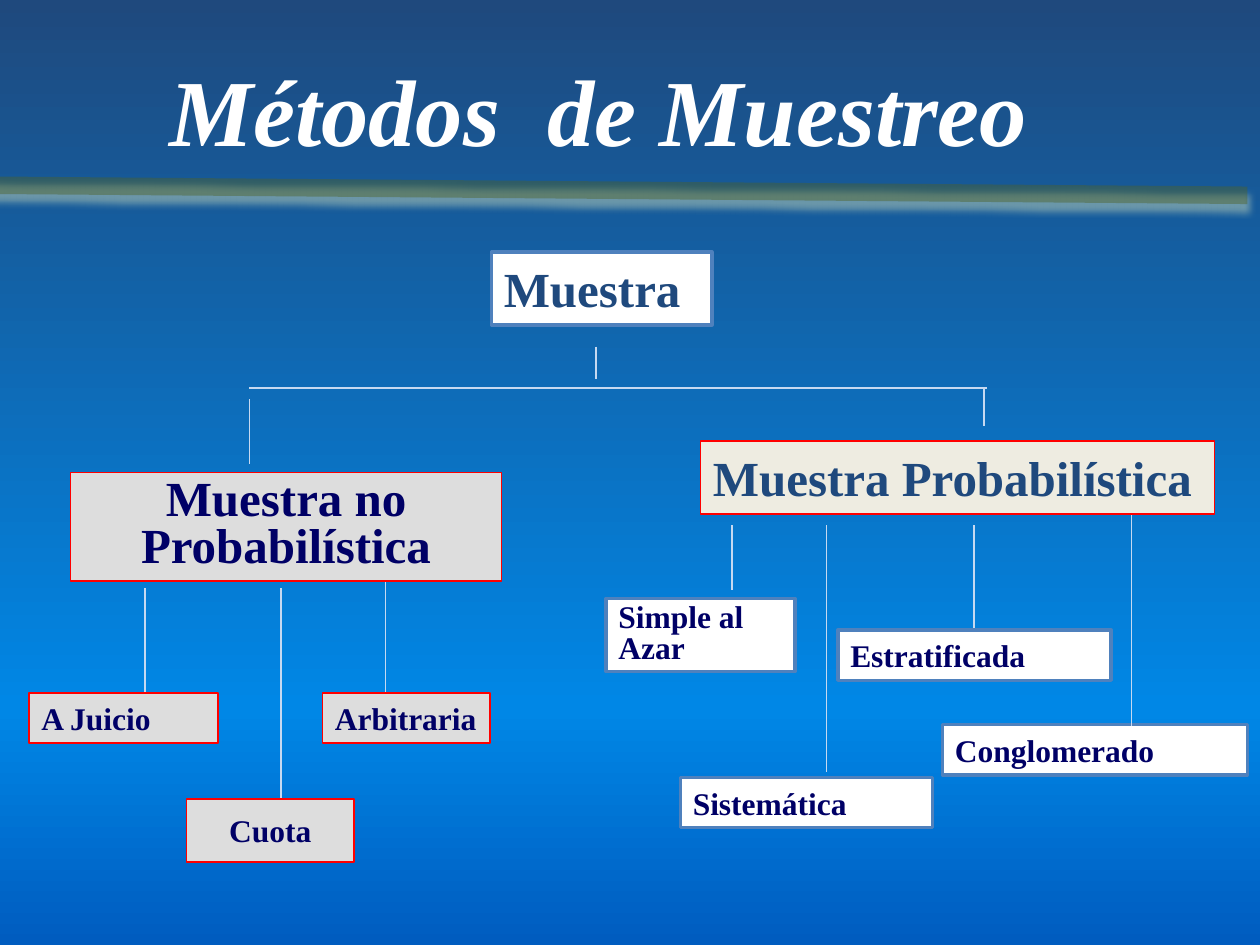
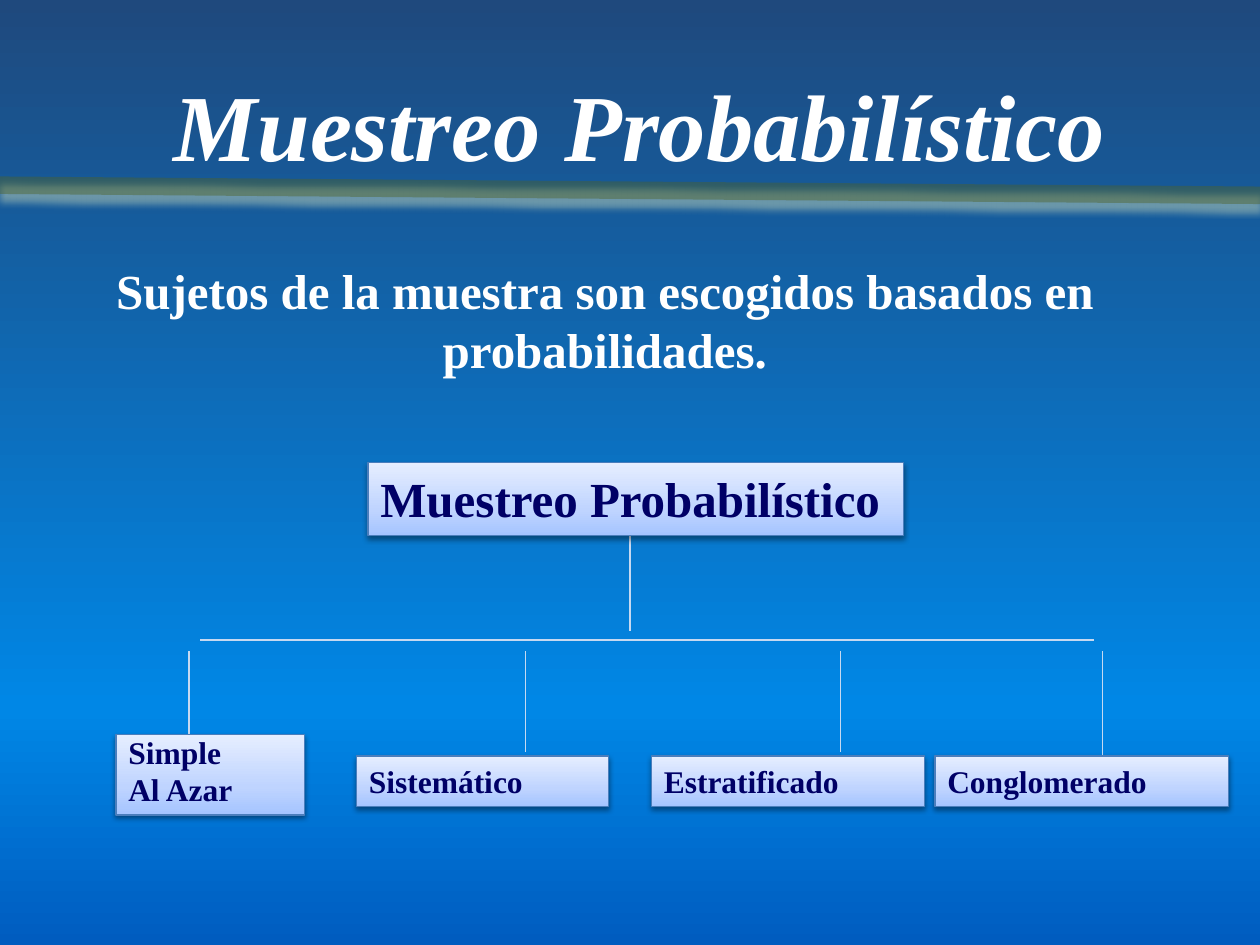
from dataclasses import dataclass

from lxml.etree import SubElement
from pptx import Presentation
from pptx.dml.color import RGBColor
from pptx.enum.shapes import MSO_CONNECTOR as Connector, MSO_SHAPE as Preset
from pptx.enum.text import MSO_ANCHOR as Anchor, MSO_AUTO_SIZE as AutoSize, PP_ALIGN as Align
from pptx.oxml.ns import qn
from pptx.util import Inches, Pt

FONT = "Times New Roman"
WHITE = RGBColor(0xFF, 0xFF, 0xFF)
BLACK = RGBColor(0x00, 0x00, 0x00)
NAVY = RGBColor(0x00, 0x00, 0x66)
DARK_BLUE = RGBColor(0x1F, 0x49, 0x7D)
BRIGHT_BLUE = RGBColor(0x00, 0x87, 0xE6)
DEEP_BLUE = RGBColor(0x00, 0x5C, 0xBF)
PALE_BLUE = RGBColor(0xC6, 0xD9, 0xF1)
BORDER_BLUE = RGBColor(0x4F, 0x81, 0xBD)
SOFT_BORDER = RGBColor(0x4B, 0x7E, 0xBC)
GRAY = RGBColor(0xDD, 0xDD, 0xDD)
CREAM = RGBColor(0xEE, 0xEC, 0xE1)
RED = RGBColor(0xFF, 0x00, 0x00)
OLIVE = RGBColor(0x4F, 0x62, 0x28)
LIGHT_GREEN = RGBColor(0xD7, 0xE4, 0xBD)

BACKGROUND_STOPS = [(0, DARK_BLUE), (75, BRIGHT_BLUE), (100, DEEP_BLUE)]
BOX_STOPS = [(0, RGBColor(0xA4, 0xC4, 0xFF)), (35, RGBColor(0xBF, 0xD4, 0xFF)),
             (100, RGBColor(0xE6, 0xEE, 0xFF))]


@dataclass
class BoxStyle:
    fill: object  # one colour, or a list of gradient stops
    border: RGBColor
    border_width: float
    text_color: RGBColor = NAVY


NON_PROBABILITY = BoxStyle(GRAY, RED, 1)
PROBABILITY = BoxStyle(WHITE, BORDER_BLUE, 2)
ROOT = BoxStyle(WHITE, BORDER_BLUE, 2, DARK_BLUE)
PROBABILITY_HEAD = BoxStyle(CREAM, RED, 1, DARK_BLUE)
GLOSSY = BoxStyle(BOX_STOPS, SOFT_BORDER, 0.75)


def add_color(parent, color, alpha=100):
    element = SubElement(parent, qn("a:srgbClr"), val=str(color))
    SubElement(element, qn("a:alpha"), val=str(alpha * 1000))


def set_gradient(owner, fill, stops, angle):
    """Fill with any number of (percent, colour) stops; angle is counter-clockwise."""
    fill.gradient()
    fill.gradient_angle = angle
    stop_list = next(owner.element.iter(qn("a:gsLst")))
    for stop in list(stop_list):
        stop_list.remove(stop)
    for percent, color in stops:
        add_color(SubElement(stop_list, qn("a:gs"), pos=str(percent * 1000)), color)


def set_shadow(shape, color, alpha, blur, distance):
    """Add a shadow that falls straight down."""
    properties = shape.element.spPr
    effects = properties.find(qn("a:effectLst"))
    shadow = SubElement(effects, qn("a:outerShdw"), blurRad=str(Pt(blur)),
                        dist=str(Pt(distance)), dir="5400000", rotWithShape="0")
    add_color(shadow, color, alpha)


class Deck:
    def __init__(self):
        self.presentation = Presentation()
        self.presentation.slide_width = Inches(10)
        self.presentation.slide_height = Inches(7.5)
        self.slide = None

    def new_slide(self):
        self.slide = self.presentation.slides.add_slide(self.presentation.slide_layouts[6])
        set_gradient(self.slide, self.slide.background.fill, BACKGROUND_STOPS, 270)

    def set_text(self, shape, text, size, color, align=Align.LEFT, spacings=(None,),
                 italic=False):
        """Set one paragraph a line; spacings holds the line spacing of each."""
        frame = shape.text_frame
        frame.text = text
        frame.word_wrap = True
        frame.vertical_anchor = Anchor.TOP
        frame.auto_size = AutoSize.SHAPE_TO_FIT_TEXT
        for paragraph, spacing in zip(frame.paragraphs, spacings):
            paragraph.alignment = align
            paragraph.line_spacing = spacing
            before = SubElement(paragraph._p.get_or_add_pPr(), qn("a:spcBef"))
            SubElement(before, qn("a:spcPct"), val="50000")
            for run in paragraph.runs:
                font = run.font
                font.name, font.size, font.bold, font.italic = FONT, Pt(size), True, italic
                font.color.rgb = color

    def text(self, left, top, width, height, text, size, italic=False):
        shape = self.slide.shapes.add_textbox(*map(Inches, (left, top, width, height)))
        self.set_text(shape, text, size, WHITE, Align.CENTER, italic=italic)

    def title(self, left, top, width, text):
        self.text(left, top, width, 1.01, text, 54, italic=True)

    def line(self, start, end, color=PALE_BLUE, width=1):
        connector = self.slide.shapes.add_connector(
            Connector.STRAIGHT, *map(Inches, (*start, *end)))
        connector.line.color.rgb = color
        connector.line.width = Pt(width)
        SubElement(connector.element.spPr, qn("a:effectLst"))
        return connector

    def drops(self, spans):
        """Vertical tree branches, each given as (x, top, bottom)."""
        for x, top, bottom in spans:
            self.line((x, top), (x, bottom))

    def band(self, left):
        band = self.line((left, 1.47), (left + 10, 1.55), OLIVE, 10)
        color = next(band.element.spPr.iter(qn("a:srgbClr")))
        SubElement(color, qn("a:alpha"), val="44000")
        set_shadow(band, LIGHT_GREEN, 100, 4, 4)

    def box(self, style, left, top, width, text, height=0.4, size=18,
            align=Align.LEFT, spacings=(None,)):
        shape = self.slide.shapes.add_shape(
            Preset.RECTANGLE, *map(Inches, (left, top, width, height)))
        shape.shadow.inherit = False
        if isinstance(style.fill, list):
            set_gradient(shape, shape.fill, style.fill, 90)
        else:
            shape.fill.solid()
            shape.fill.fore_color.rgb = style.fill
        shape.line.color.rgb = style.border
        shape.line.width = Pt(style.border_width)
        if style is GLOSSY:
            set_shadow(shape, BLACK, 38, 3.1, 1.6)
        self.set_text(shape, text, size, style.text_color, align, spacings)
        return shape


def build_methods(deck):
    deck.new_slide()
    deck.band(-0.1)
    deck.title(0.4, 0.36, 8.7, "Métodos  de Muestreo")

    deck.line((1.98, 3.08), (7.83, 3.08))
    deck.drops([(4.73, 2.75, 3.01), (1.98, 3.17, 3.68), (7.81, 3.08, 3.38),
                (1.15, 4.67, 5.51), (2.23, 4.67, 6.35), (3.06, 4.59, 5.51),
                (5.81, 4.17, 4.68), (6.56, 4.17, 6.13), (7.73, 4.17, 5.01)])

    deck.box(ROOT, 3.9, 2, 1.75, "Muestra", 0.58, 28)
    deck.box(NON_PROBABILITY, 0.56, 3.75, 3.42, "Muestra no Probabilística", 0.86, 28,
             Align.CENTER, [0.8])
    deck.box(NON_PROBABILITY, 0.23, 5.5, 1.5, "A Juicio")
    deck.box(NON_PROBABILITY, 2.56, 5.5, 1.33, "Arbitraria")
    quota = deck.box(NON_PROBABILITY, 1.48, 6.34, 1.33, "Cuota", 0.5, align=Align.CENTER)
    quota.text_frame.auto_size = AutoSize.NONE
    quota.text_frame.word_wrap = False
    quota.text_frame.vertical_anchor = Anchor.MIDDLE

    deck.box(PROBABILITY_HEAD, 5.56, 3.5, 4.08, "Muestra Probabilística", 0.58, 28)
    deck.box(PROBABILITY, 4.81, 4.75, 1.5, "Simple al Azar", 0.58, spacings=[0.8])
    deck.box(PROBABILITY, 5.4, 6.17, 2, "Sistemática")
    deck.box(PROBABILITY, 6.65, 5, 2.17, "Estratificada")
    deck.box(PROBABILITY, 7.48, 5.75, 2.42, "Conglomerado")
    deck.drops([(8.98, 4.09, 5.76)])


def build_probability_sampling(deck):
    deck.new_slide()
    deck.title(0.5, 0.48, 9.15, "Muestreo Probabilístico")
    deck.text(0.58, 2.02, 8.44, 1.04,
              "Sujetos de la muestra son escogidos basados en probabilidades.", 28)

    deck.line((1.59, 5.08), (8.68, 5.08))
    deck.drops([(5, 4.25, 5.01), (1.5, 5.17, 5.85), (4.17, 5.17, 5.97),
                (6.67, 5.17, 5.97), (8.75, 5.17, 6.01)])

    deck.box(GLOSSY, 2.92, 3.67, 4.25, "Muestreo Probabilístico", 0.58, 28)
    deck.box(GLOSSY, 0.92, 5.83, 1.5, "Simple\nAl Azar", 0.64, spacings=[0.8, 0.5])
    for left, width, method in [(2.83, 2, "Sistemático"), (5.17, 2.17, "Estratificado"),
                                (7.42, 2.33, "Conglomerado")]:
        deck.box(GLOSSY, left, 6, width, method)
    deck.band(0)


def main():
    deck = Deck()
    build_methods(deck)
    build_probability_sampling(deck)
    deck.presentation.save("out.pptx")


if __name__ == "__main__":
    main()
